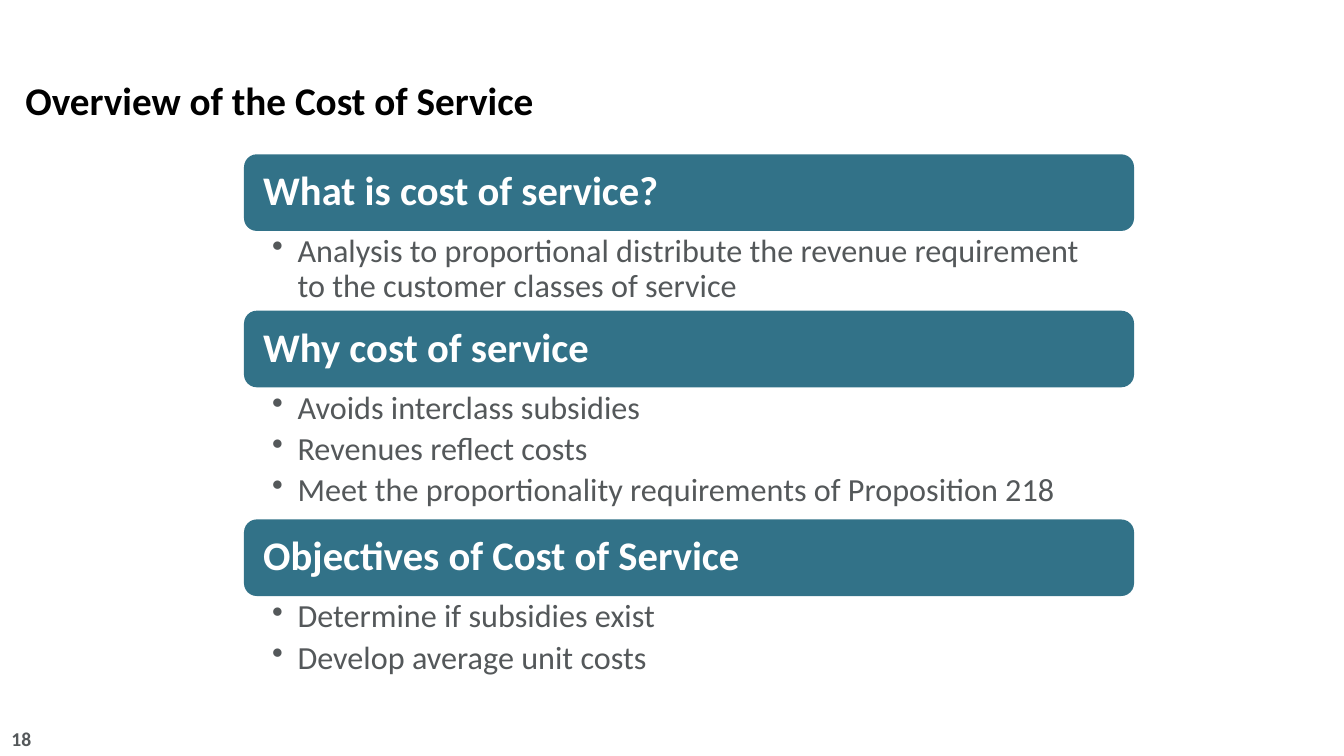
import dataclasses

import lxml.etree
import pptx
import pptx.dml.color
import pptx.enum.shapes
import pptx.enum.text
import pptx.oxml.ns
import pptx.util

Cm = pptx.util.Cm
Pt = pptx.util.Pt
Rgb = pptx.dml.color.RGBColor
Align = pptx.enum.text.PP_ALIGN
Anchor = pptx.enum.text.MSO_ANCHOR


@dataclasses.dataclass(frozen=True)
class Theme:
    font: str = "Calibri"
    black: Rgb = Rgb(0x00, 0x00, 0x00)
    white: Rgb = Rgb(0xFF, 0xFF, 0xFF)
    teal: Rgb = Rgb(0x32, 0x72, 0x88)
    gray: Rgb = Rgb(0x54, 0x58, 0x5A)
    title: int = 28
    head: int = 29
    body: int = 23
    number: int = 14


THEME = Theme()
LEFT, TOP, WIDTH = 6.15, 3.89, 22.43
BAR = 1.93

# Heading, height of the list in cm, list items
TOPICS = [
    ("What is cost of service?", 2.01, [
        "Analysis to proportional distribute the revenue requirement "
        "to the customer classes of service",
    ]),
    ("Why cost of service", 3.33, [
        "Avoids interclass subsidies",
        "Revenues reflect costs",
        "Meet the proportionality requirements of Proposition 218",
    ]),
    ("Objectives of Cost of Service", 2.21, [
        "Determine if subsidies exist",
        "Develop average unit costs",
    ]),
]


def fill_text(shape, lines, size, color, bold=False, space=0.9, after=0,
              align=Align.LEFT, anchor=Anchor.TOP,
              insets=(0.25, 0.13, 0.25, 0.13), wrap=True):
    """Set one paragraph per line; insets are left, top, right, bottom in cm."""
    frame = shape.text_frame
    frame.word_wrap = wrap
    frame.vertical_anchor = anchor
    (frame.margin_left, frame.margin_top,
     frame.margin_right, frame.margin_bottom) = map(Cm, insets)
    frame.text = "\n".join(lines)
    for para in frame.paragraphs:
        para.alignment = align
        para.line_spacing = space
        para.space_after = Pt(after)
        for run in para.runs:
            run.font.name = THEME.font
            run.font.size = Pt(size)
            run.font.bold = bold
            run.font.color.rgb = color


def add_text(slide, box, lines, size, color, **style):
    shape = slide.shapes.add_textbox(*map(Cm, box))
    fill_text(shape, lines, size, color, **style)
    return shape


def add_bar(slide, top, text):
    bar = slide.shapes.add_shape(
        pptx.enum.shapes.MSO_SHAPE.ROUNDED_RECTANGLE,
        Cm(LEFT), Cm(top), Cm(WIDTH), Cm(BAR))
    bar.shadow.inherit = False
    bar.fill.solid()
    bar.fill.fore_color.rgb = THEME.teal
    bar.line.fill.background()
    fill_text(bar, [text], THEME.head, THEME.white, bold=True,
              anchor=Anchor.MIDDLE, insets=(0.39, 0.3, 0.39, 0.3))


def add_list(slide, top, height, items):
    box = add_text(slide, (LEFT, top, WIDTH, height), items,
                   THEME.body, THEME.gray, after=4.6,
                   insets=(0.71, 0.1, 0.58, 0.1))
    for para in box.text_frame.paragraphs:
        para.level = 1
        props = para._p.get_or_add_pPr()
        props.set("marL", str(Cm(0.64)))
        props.set("indent", str(-Cm(0.64)))
        mark = lxml.etree.SubElement(props, pptx.oxml.ns.qn("a:buChar"))
        mark.set("char", "•")


def main():
    deck = pptx.Presentation()
    deck.slide_width, deck.slide_height = Cm(33.87), Cm(19.05)
    slide = deck.slides.add_slide(deck.slide_layouts[6])

    add_text(slide, (0, 0, 33.87, 3.23), ["Overview of the Cost of Service"],
             THEME.title, THEME.black, bold=True, space=Pt(26),
             anchor=Anchor.BOTTOM, insets=(0.64, 0.13, 0.64, 0.13))

    top = TOP
    for head, height, items in TOPICS:
        add_bar(slide, top, head)
        add_list(slide, top + BAR, height, items)
        top += BAR + height

    add_text(slide, (0.03, 18.19, 1.02, 0.86), ["18"], THEME.number,
             THEME.gray, bold=True, space=1.0, align=Align.CENTER, wrap=False)
    deck.save("out.pptx")


if __name__ == "__main__":
    main()
